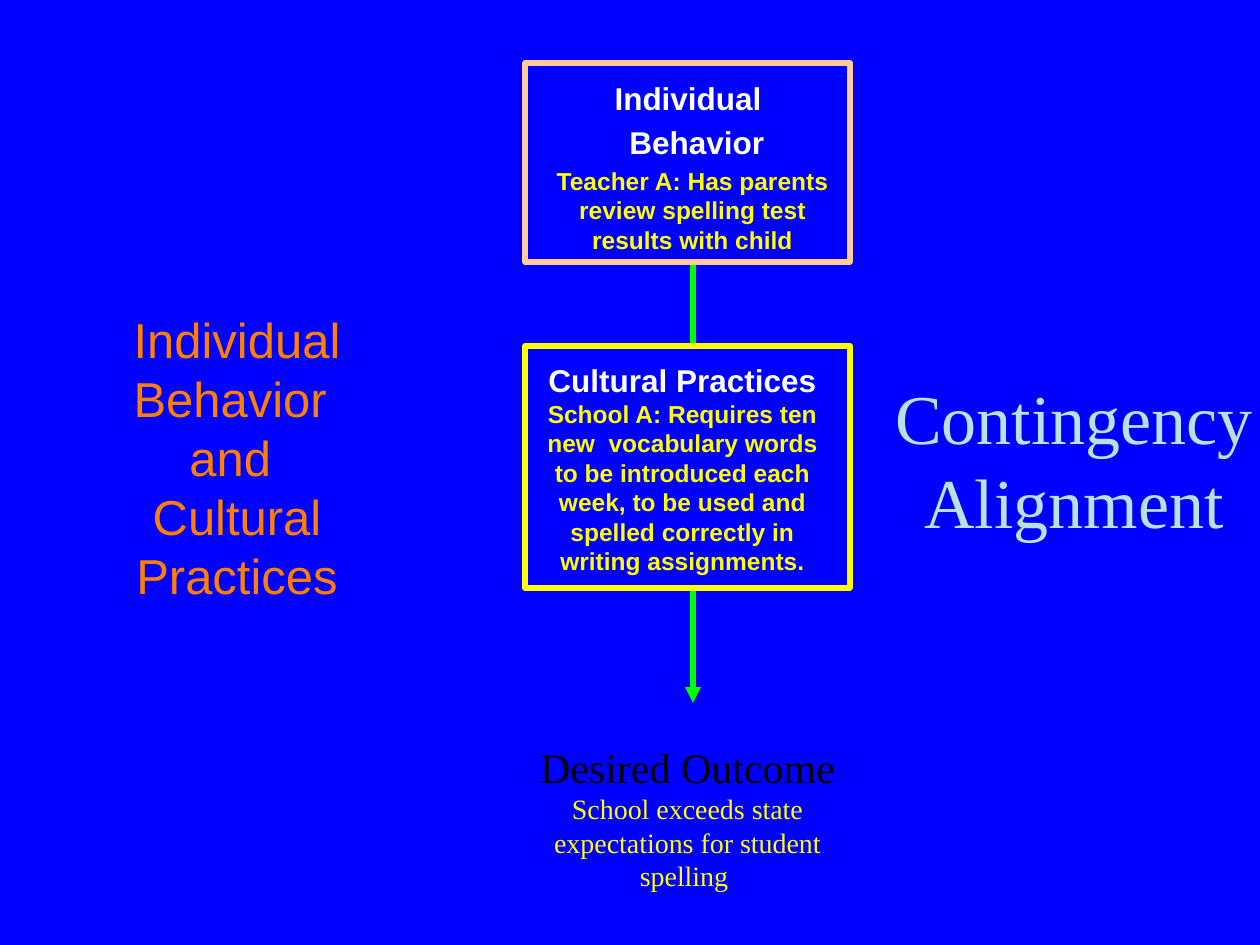
from dataclasses import dataclass
from lxml import etree
from pptx import Presentation
from pptx.dml.color import RGBColor as RGB
from pptx.enum.shapes import MSO_CONNECTOR as CONN, MSO_SHAPE as SHAPE
from pptx.enum.text import MSO_ANCHOR as ANCHOR, MSO_AUTO_SIZE as AUTO, PP_ALIGN as ALIGN
from pptx.oxml.ns import qn
from pptx.util import Pt


@dataclass(frozen=True)
class Theme:
    blue: RGB = RGB(0x00, 0x00, 0xFF)
    green: RGB = RGB(0x00, 0xFF, 0x00)
    yellow: RGB = RGB(0xFF, 0xFF, 0x00)
    peach: RGB = RGB(0xFF, 0xCC, 0x99)
    orange: RGB = RGB(0xFF, 0x80, 0x00)
    pale: RGB = RGB(0xBB, 0xE0, 0xE3)
    white: RGB = RGB(0xFF, 0xFF, 0xFF)
    black: RGB = RGB(0x00, 0x00, 0x00)
    sans: str = "Arial"
    serif: str = "Times New Roman"
    display: int = 40
    title: int = 28
    outcome: int = 24
    heading: int = 18
    note: int = 16
    body: int = 14
    stroke: int = 3


T = Theme()
SCALE = 914400 / 126


def px(*values):
    return [round(v * SCALE) for v in values]


def format_paragraph(p, text, size, color, font, bold=False, before=0):
    p.text = text
    p.alignment = ALIGN.CENTER
    p.space_before = Pt(before)
    for r in p.runs:
        r.font.name = font
        r.font.size = Pt(size)
        r.font.bold = bold
        r.font.color.rgb = color


prs = Presentation()
prs.slide_width, prs.slide_height = px(1260, 945)
s = prs.slides.add_slide(prs.slide_layouts[5])
s.background.fill.solid()
s.background.fill.fore_color.rgb = T.blue

title = s.shapes.title
title.left, title.top, title.width, title.height = px(53, 315, 368, 284)
tf = title.text_frame
tf.word_wrap = True
tf.auto_size = AUTO.NONE
tf.vertical_anchor = ANCHOR.MIDDLE
format_paragraph(tf.paragraphs[0], "Individual Behavior \vand \vCultural Practices",
                 T.title, T.orange, T.sans)

arrow = s.shapes.add_connector(CONN.STRAIGHT, *px(693, 126, 693, 703))
arrow.line.color.rgb = T.green
arrow.line.width = Pt(T.stroke)
etree.SubElement(arrow.line._get_or_add_ln(), qn("a:tailEnd"), type="triangle")
etree.SubElement(arrow._element.spPr, qn("a:effectLst"))

for top, height, color in [(346, 242, T.yellow), (63, 199, T.peach)]:
    box = s.shapes.add_shape(SHAPE.RECTANGLE, *px(525, top, 325, height))
    box.shadow.inherit = False
    box.fill.solid()
    box.fill.fore_color.rgb = T.blue
    box.line.color.rgb = color
    box.line.width = Pt(T.stroke)

labels = [
    ((525, 355, 315, 227), T.sans, True, [
        ("Cultural Practices", T.heading, T.white, 0),
        ("School A: Requires ten new  vocabulary words to be introduced each week, "
         "to be used and spelled correctly in writing assignments.", T.body, T.yellow, 0),
    ]),
    ((535, 73, 315, 190), T.sans, True, [
        ("Individual ", T.heading, T.white, 0),
        (" Behavior", T.heading, T.white, 3.6),
        ("Teacher A: Has parents review spelling test results with child",
         T.body, T.yellow, 2.8),
    ]),
    ((882, 368, 384, 180), T.serif, False, [
        ("Contingency", T.display, T.pale, 0),
        ("Alignment", T.display, T.pale, 0),
    ]),
    ((514, 735, 347, 164), T.serif, False, [
        ("Desired Outcome", T.outcome, T.black, 0),
        ("School exceeds state expectations for student spelling ", T.note, T.yellow, 0),
    ]),
]

for place, font, bold, lines in labels:
    tf = s.shapes.add_textbox(*px(*place)).text_frame
    tf.word_wrap = True
    for i, (text, size, color, before) in enumerate(lines):
        p = tf.add_paragraph() if i else tf.paragraphs[0]
        format_paragraph(p, text, size, color, font, bold, before)

prs.save("out.pptx")
